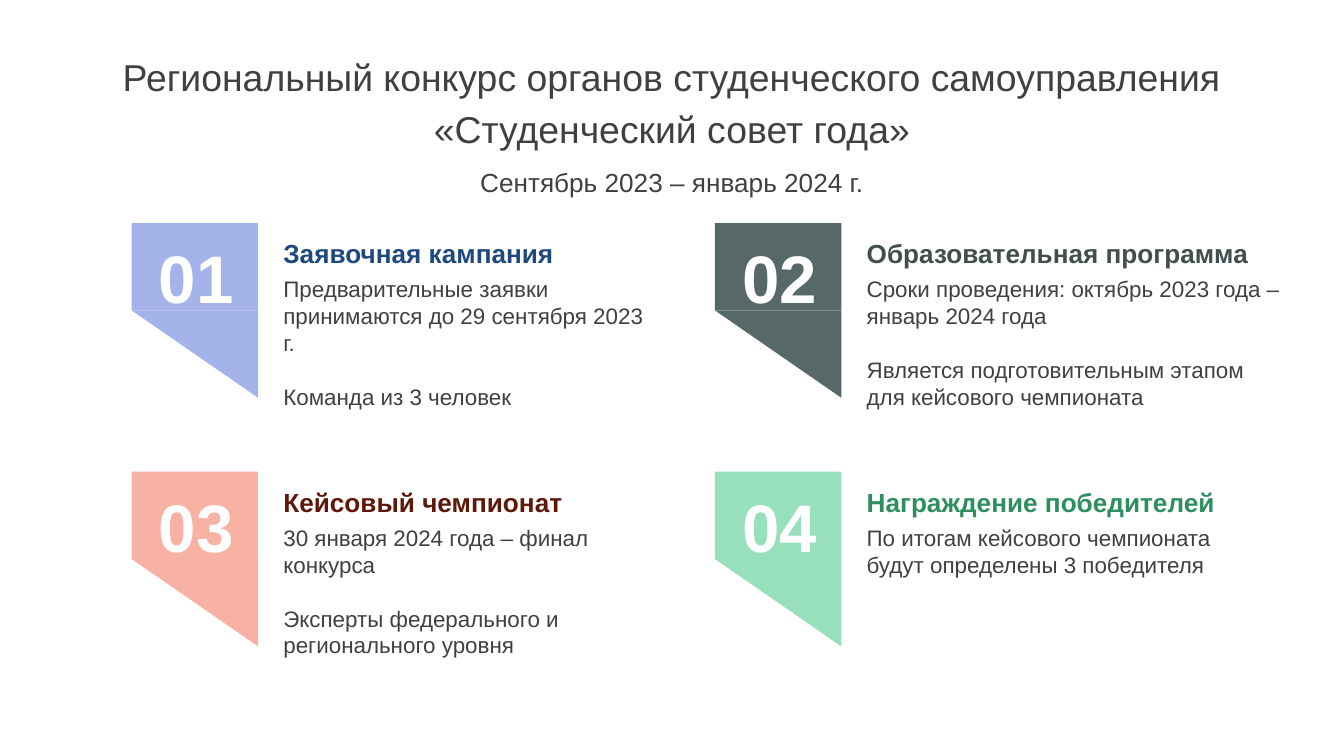
from pptx import Presentation
from pptx.dml.color import RGBColor
from pptx.enum.shapes import MSO_SHAPE
from pptx.enum.text import MSO_ANCHOR, MSO_AUTO_SIZE, PP_ALIGN
from pptx.util import Inches, Pt

RECTANGLE, TRIANGLE = MSO_SHAPE.RECTANGLE, MSO_SHAPE.ISOSCELES_TRIANGLE
TOP, MIDDLE = MSO_ANCHOR.TOP, MSO_ANCHOR.MIDDLE
FIT, FIXED = MSO_AUTO_SIZE.SHAPE_TO_FIT_TEXT, MSO_AUTO_SIZE.NONE
LEFT, CENTER = PP_ALIGN.LEFT, PP_ALIGN.CENTER

THEME = {
    "font": "Arial",
    "text": "404040",
    "number": "FFFFFF",
    "badges": ["A4B4EA", "576868", "F8B2A3", "98DFBB"],
    "headings": ["1F497D", "414E4E", "5F1707", "2C8F5D"],
    "title_size": 20,
    "heading_size": 14,
    "body_size": 12,
    "number_size": 36,
}
LINE_HEIGHT = 1.2

STAGES = [
    ("Заявочная кампания", 2.91, 2.99, 0.91,
     ["Предварительные заявки принимаются до 29 сентября 2023 г.",
      "Команда из 3 человек"]),
    ("Образовательная программа", 3.32, 3.32, 1.11,
     ["Сроки проведения: октябрь 2023 года – январь 2024 года",
      "Является подготовительным этапом для кейсового чемпионата"]),
    ("Кейсовый чемпионат", 2.91, 2.91, 1.11,
     ["30 января 2024 года – финал конкурса",
      "Эксперты федерального и регионального уровня"]),
    ("Награждение победителей", 2.91, 2.91, 0.5,
     ["По итогам кейсового чемпионата будут определены 3 победителя"]),
]


def place(box, left, top, width, height):
    box.left, box.top = Inches(left), Inches(top)
    box.width, box.height = Inches(width), Inches(height)
    return box


def write(box, lines, size, color, bold=False, align=LEFT, gap=0, anchor=TOP, fit=FIT):
    frame = box.text_frame
    frame.word_wrap = True
    frame.auto_size = fit
    frame.vertical_anchor = anchor
    for index, line in enumerate(lines):
        para = frame.add_paragraph() if index else frame.paragraphs[0]
        para.alignment = align
        para.space_before = Pt(gap if index else 0)
        para.line_spacing = Pt(size * LINE_HEIGHT)
        span = para.add_run()
        span.text = line
        span.font.name = THEME["font"]
        span.font.size = Pt(size)
        span.font.bold = bold
        span.font.color.rgb = RGBColor.from_string(color)


deck = Presentation()
deck.slide_width, deck.slide_height = Inches(10), Inches(10 * 9 / 16)
page = deck.slides.add_slide(deck.slide_layouts[1])

title = place(page.shapes.title, 0, 0.45, 10, 0.63)
write(title, ["Региональный конкурс органов студенческого самоуправления",
              "«Студенческий совет года»"],
      THEME["title_size"], THEME["text"], align=CENTER, gap=4, anchor=MIDDLE, fit=FIXED)

period = place(page.placeholders[1], 0, 1.2, 10, 0.31)
properties = period.text_frame.paragraphs[0]._p.get_or_add_pPr()
properties.set("marL", "0")
properties.set("indent", "0")
properties.insert_element_before(
    properties.makeelement("{http://schemas.openxmlformats.org/drawingml/2006/main}buNone"),
    "a:tabLst", "a:defRPr", "a:extLst")
write(period, ["Сентябрь 2023 – январь 2024 г."],
      THEME["heading_size"], THEME["text"], align=CENTER, anchor=MIDDLE, fit=FIXED)

for index, (heading, heading_width, body_width, body_height, lines) in enumerate(STAGES):
    row, column = divmod(index, 2)
    left, top = 0.98 + 4.34 * column, 1.66 + 1.85 * row

    badge = page.shapes.add_group_shape()
    for offset, kind in enumerate([RECTANGLE, TRIANGLE]):
        part = badge.shapes.add_shape(
            kind, Inches(left), Inches(top + 0.65 * offset), Inches(0.94), Inches(0.65))
        part.shadow.inherit = False
        part.fill.solid()
        part.fill.fore_color.rgb = RGBColor.from_string(THEME["badges"][index])
        part.line.fill.background()
    part.adjustments[0] = 0
    part.rotation = 180

    texts = [
        ((left + 1.03, top + 0.34, body_width, body_height), lines,
         THEME["body_size"], THEME["text"], False, LEFT),
        ((left + 1.03, top + 0.06, heading_width, 0.34), [heading],
         THEME["heading_size"], THEME["headings"][index], True, LEFT),
        ((left + 0.09, top + 0.05, 0.78, 0.71), [f"{index + 1:02}"],
         THEME["number_size"], THEME["number"], True, CENTER),
    ]
    for area, content, size, color, bold, align in texts:
        box = page.shapes.add_textbox(*map(Inches, area))
        write(box, content, size, color, bold, align, gap=size * LINE_HEIGHT)

deck.save("out.pptx")
